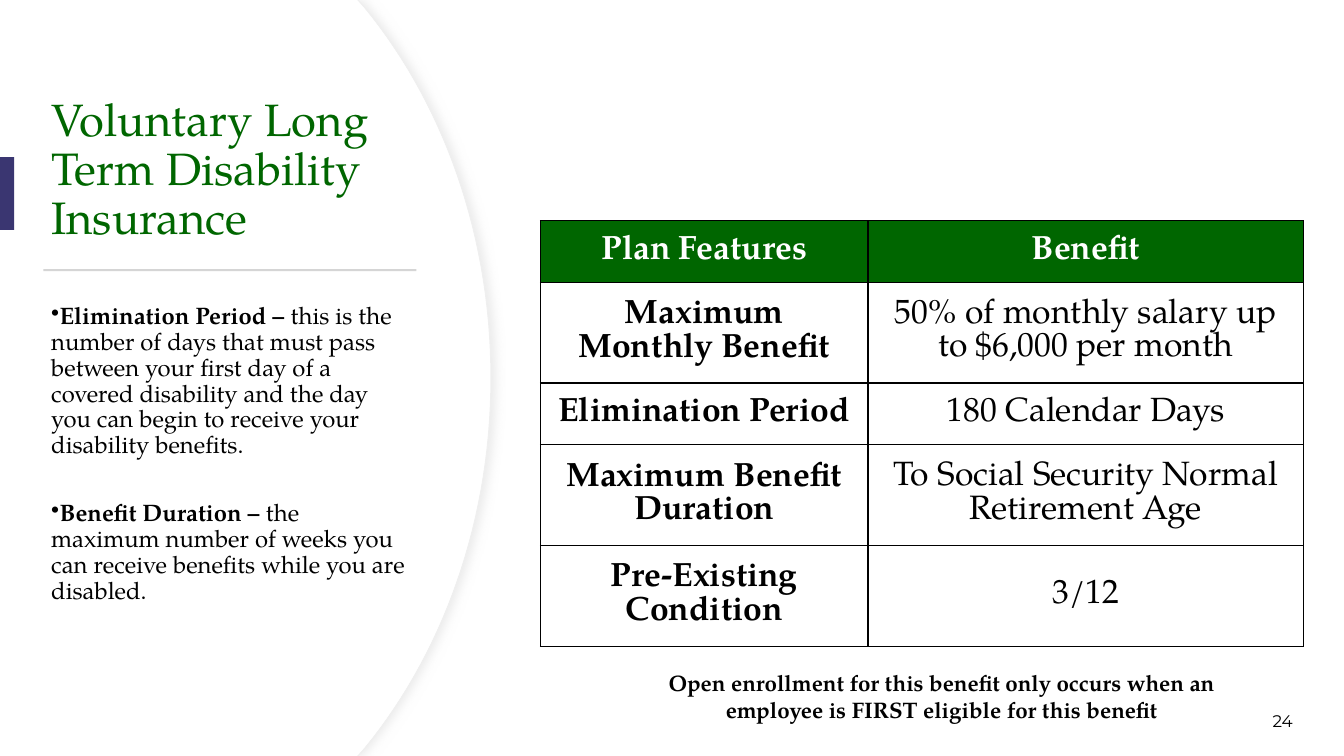
"""Build the slide on voluntary long term disability insurance."""
import pptx
import pptx.util
import pptx.dml.color
import pptx.enum.shapes
import pptx.enum.text
import pptx.oxml
import pptx.oxml.ns

Inches, Pt = pptx.util.Inches, pptx.util.Pt
ALIGN = pptx.enum.text.PP_ALIGN
MIDDLE = pptx.enum.text.MSO_ANCHOR.MIDDLE
RECT = pptx.enum.shapes.MSO_SHAPE.RECTANGLE
NS = pptx.oxml.ns.nsdecls("a")
SERIF, SANS = "TeX Gyre Pagella", "Montserrat"
GREEN, BLACK, WHITE = "006600", "000000", "FFFFFF"

TITLE = "Voluntary Long Term Disability Insurance"
TERMS = [
    ("Elimination Period – ",
     "this is the number of days that must pass between your first day of a "
     "covered disability and the day you can begin to receive your "
     "disability benefits."),
    ("Benefit Duration – ",
     "the maximum number of weeks you can receive benefits while you are "
     "disabled."),
]
PLAN = [
    ("Plan Features", "Benefit"),
    ("Maximum Monthly Benefit", "50% of monthly salary up to $6,000 per month"),
    ("Elimination Period", "180 Calendar Days"),
    ("Maximum Benefit Duration", "To Social Security Normal Retirement Age"),
    ("Pre-Existing Condition", "3/12"),
]
WIDTHS = [3.25, 4.32]
HEIGHTS = [0.61, 1, 0.61, 1, 1]
NOTE = ("Open enrollment for this benefit only occurs when an "
        "employee is FIRST eligible for this benefit")
BARS = [((0, 1.56, 0.14, 0.72), "3A3671"), ((0.43, 2.67, 3.7, 0.02), "D5D5D5")]
CURVE = [(3.62, 0.08), (4.39, 1.02), (4.87, 2.32), (4.87, 3.75)]
STEPS = 30


def rgb(code):
    return pptx.dml.color.RGBColor.from_string(code)


def paint(shape, code):
    shape.shadow.inherit = False
    shape.fill.solid()
    shape.fill.fore_color.rgb = rgb(code)
    shape.line.fill.background()


def style(run, size, color=BLACK, bold=False, font=SERIF):
    run.font.name, run.font.size, run.font.bold = font, Pt(size), bold
    run.font.color.rgb = rgb(color)


def add_text(slide, box, text, size, align=ALIGN.LEFT, **look):
    frame = slide.shapes.add_textbox(*map(Inches, box)).text_frame
    frame.word_wrap = True
    frame.text = text
    para = frame.paragraphs[0]
    para.alignment = align
    for run in para.runs:
        style(run, size, **look)
    return frame


def add_disc(slide, shift):
    arc = []
    for step in range(STEPS + 1):
        t = step / STEPS
        mix = ((1 - t) ** 3, 3 * t * (1 - t) ** 2, 3 * t * t * (1 - t), t ** 3)
        arc.append([sum(m * p[axis] for m, p in zip(mix, CURVE)) for axis in (0, 1)])
    half = [(3.55, 0)] + arc
    edge = half + [(x, 7.5 - y) for x, y in reversed(half[:-1])]
    points = [(Inches(x - shift), Inches(y)) for x, y in edge]
    form = slide.shapes.build_freeform(0, 0, scale=1.0)
    form.add_line_segments(points + [(0, Inches(7.5))], close=True)
    disc = form.convert_to_shape()
    paint(disc, WHITE)
    return disc


def add_terms(slide):
    frame = add_text(slide, (0.41, 2.97, 3.76, 3.51), "", 17)
    for index, (term, text) in enumerate(TERMS):
        para = frame.add_paragraph() if index else frame.paragraphs[0]
        props = para._p.get_or_add_pPr()
        props.set("marL", "0")
        props.set("indent", "0")
        props.append(pptx.oxml.parse_xml(f'<a:buChar {NS} char="•"/>'))
        para.line_spacing, para.space_after = 0.9, Pt(6)
        if index:
            para.space_before = Pt(24.5)
        for part, bold in ((term, True), (text, False)):
            run = para.add_run()
            run.text = part
            style(run, 17, bold=bold)


def add_plan(slide):
    box = map(Inches, (5.36, 2.19, sum(WIDTHS), sum(HEIGHTS)))
    table = slide.shapes.add_table(len(PLAN), len(WIDTHS), *box).table
    for col, width in zip(table.columns, WIDTHS):
        col.width = Inches(width)
    for r, (row, height) in enumerate(zip(PLAN, HEIGHTS)):
        table.rows[r].height = Inches(height)
        for c, text in enumerate(row):
            cell = table.cell(r, c)
            cell.text = text
            cell.vertical_anchor = MIDDLE
            cell.margin_left = cell.margin_right = Inches(0.15)
            cell.margin_top = cell.margin_bottom = Inches(0.07)
            para = cell.text_frame.paragraphs[0]
            para.alignment, para.line_spacing = ALIGN.CENTER, Pt(24)
            style(para.runs[0], 24, BLACK if r else WHITE, r == 0 or c == 0)
            props = cell._tc.get_or_add_tcPr()
            for side in ("lnL", "lnR", "lnT", "lnB"):
                props.append(pptx.oxml.parse_xml(
                    f'<a:{side} {NS} w="12700"><a:solidFill>'
                    f'<a:srgbClr val="{BLACK}"/></a:solidFill></a:{side}>'))
            cell.fill.solid()
            cell.fill.fore_color.rgb = rgb(WHITE if r else GREEN)


def main():
    deck = pptx.Presentation()
    deck.slide_width, deck.slide_height = Inches(13.33), Inches(7.5)
    slide = deck.slides.add_slide(deck.slide_layouts[6])

    rim = add_disc(slide, 0)
    rim.line.color.rgb = rgb("EFEFEF")
    rim.line.width = Pt(0.75)
    glow = rim._element.spPr.find(pptx.oxml.ns.qn("a:effectLst"))
    glow.append(pptx.oxml.parse_xml(
        f'<a:outerShdw {NS} blurRad="88900" dist="38100" dir="0">'
        '<a:srgbClr val="D9D9D9"><a:alpha val="50000"/></a:srgbClr></a:outerShdw>'))
    add_disc(slide, 0.01)

    title = add_text(slide, (0.41, 0.92, 4, 1.6), TITLE, 32.4, color=GREEN)
    title.paragraphs[0].line_spacing = 0.9
    for box, color in BARS:
        paint(slide.shapes.add_shape(RECT, *map(Inches, box)), color)
    add_terms(slide)
    page = add_text(slide, (10.6, 6.95, 2.32, 0.4), "24", 12, ALIGN.RIGHT, font=SANS)
    page.vertical_anchor = MIDDLE
    add_plan(slide)
    add_text(slide, (6.06, 6.59, 6.56, 0.64), NOTE, 16, ALIGN.CENTER, bold=True)
    deck.save("out.pptx")


if __name__ == "__main__":
    main()
